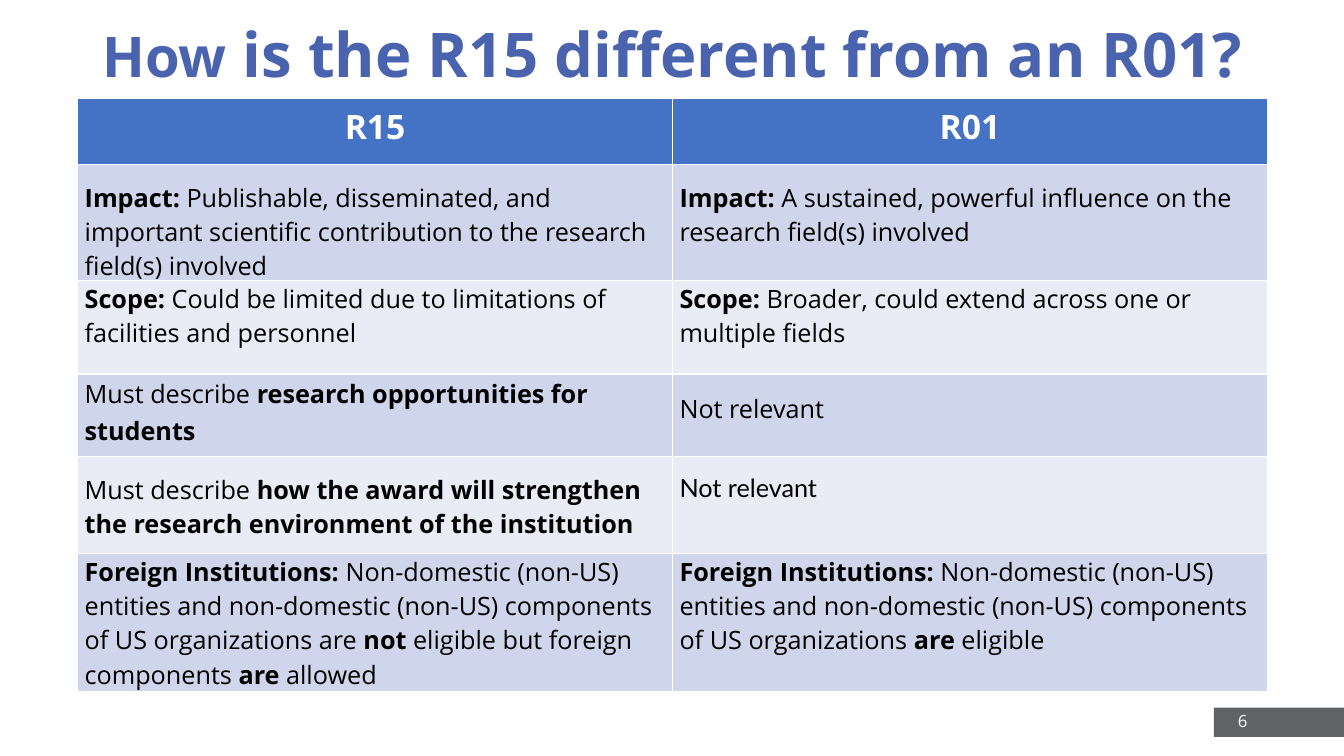
from pptx import Presentation
from pptx.dml.color import RGBColor
from pptx.enum.shapes import MSO_SHAPE
from pptx.enum.text import MSO_ANCHOR, PP_ALIGN
from pptx.util import Pt

PX = 9144
WHITE = RGBColor(0xFF, 0xFF, 0xFF)
BLACK = RGBColor(0x00, 0x00, 0x00)
TITLE_BLUE = RGBColor(0x49, 0x63, 0xAE)
HEADER_BLUE = RGBColor(0x44, 0x72, 0xC4)
BANDS = [RGBColor(0xCF, 0xD5, 0xEA), RGBColor(0xE9, 0xEB, 0xF5)]
FOOTER_GREY = RGBColor(0x61, 0x62, 0x65)
FONT = "Open Sans"

HEADINGS = ["R15", "R01"]
ROW_HEIGHTS = [65, 115, 93, 82, 96, 137]
TIGHT, LOWERED = 1, 16
FOREIGN = ("**Foreign Institutions:** Non-domestic (non-US) entities and "
           "non-domestic (non-US) components of US organizations ")
COMPARISON = [
    [("**Impact:** Publishable, disseminated, and important scientific "
      "contribution to the research field(s) involved", LOWERED),
     ("**Impact:** A sustained, powerful influence on the research field(s) "
      "involved", LOWERED)],
    [("**Scope:** Could be limited due to limitations of facilities and "
      "personnel", TIGHT),
     ("**Scope:** Broader, could extend across one or multiple fields", TIGHT)],
    [("Must describe **research opportunities for students**", TIGHT),
     ("Not relevant", LOWERED)],
    [("Must describe **how the award will strengthen the research environment "
      "of the institution**", LOWERED),
     ("Not relevant", LOWERED)],
    [(FOREIGN + "are **not** eligible but foreign components **are** allowed",
      TIGHT),
     (FOREIGN + "**are** eligible", TIGHT)],
]
STUDENTS_ROW = 3
LATO_CELL = (4, 1)


def add_span(para, text, size, color, bold=False, font=FONT):
    """Append one formatted run to a paragraph."""
    span = para.add_run()
    span.text = text
    span.font.name = font
    span.font.size = Pt(size)
    span.font.bold = bold
    span.font.color.rgb = color


def add_text_box(page, left, top, width, height):
    """Add a wrapping, vertically centred text box and return its paragraph."""
    box = page.shapes.add_textbox(left * PX, top * PX, width * PX, height * PX)
    box.text_frame.word_wrap = True
    box.text_frame.vertical_anchor = MSO_ANCHOR.MIDDLE
    return box.text_frame.paragraphs[0]


def add_title(page, left, top, width, height):
    """Place the slide title."""
    para = add_text_box(page, left, top, width, height)
    para.line_spacing = 0.9
    add_span(para, "How", 40, TITLE_BLUE, True)
    add_span(para, " is the R15 different from an R01?", 44, TITLE_BLUE, True)


def add_footer(page, left, top, width, height):
    """Place the grey page tab with the page number on it."""
    tab = page.shapes.add_shape(MSO_SHAPE.RECTANGLE, left * PX, top * PX,
                                width * PX, height * PX)
    tab.shadow.inherit = False
    tab.fill.solid()
    tab.fill.fore_color.rgb = FOOTER_GREY
    tab.line.fill.background()
    para = add_text_box(page, left - 257, top - 7, 300, 40)
    para.alignment = PP_ALIGN.RIGHT
    add_span(para, "6", 12, WHITE)


def fill_cell(cell, color):
    """Give a table cell a solid fill."""
    cell.fill.solid()
    cell.fill.fore_color.rgb = color


def add_comparison(page, left, top, width):
    """Place the two-column comparison table."""
    frame = page.shapes.add_table(len(ROW_HEIGHTS), len(HEADINGS), left * PX,
                                  top * PX, width * PX, sum(ROW_HEIGHTS) * PX)
    table = frame.table
    for row, height in zip(table.rows, ROW_HEIGHTS):
        row.height = height * PX
    for column, heading in enumerate(HEADINGS):
        cell = table.cell(0, column)
        fill_cell(cell, HEADER_BLUE)
        para = cell.text_frame.paragraphs[0]
        para.alignment = PP_ALIGN.CENTER
        add_span(para, heading, 24, WHITE, True)
    for row, entries in enumerate(COMPARISON, start=1):
        for column, (text, margin_top) in enumerate(entries):
            cell = table.cell(row, column)
            fill_cell(cell, BANDS[(row - 1) % 2])
            cell.margin_left = cell.margin_right = 7 * PX
            cell.margin_top = margin_top * PX
            cell.margin_bottom = 0
            para = cell.text_frame.paragraphs[0]
            if row == STUDENTS_ROW:
                para.line_spacing = 1.06
            font = "Lato" if (row, column) == LATO_CELL else FONT
            for index, piece in enumerate(text.split("**")):
                if piece:
                    add_span(para, piece, 18, BLACK, index % 2 == 1, font)


def main():
    """Build and save the deck."""
    deck = Presentation()
    deck.slide_width = 1333 * PX
    deck.slide_height = 750 * PX
    page = deck.slides.add_slide(deck.slide_layouts[6])
    add_footer(page, 1204, 702, 129, 29)
    add_title(page, 92, -15, 1242, 145)
    add_comparison(page, 77, 98, 1180)
    deck.save("out.pptx")


if __name__ == "__main__":
    main()
